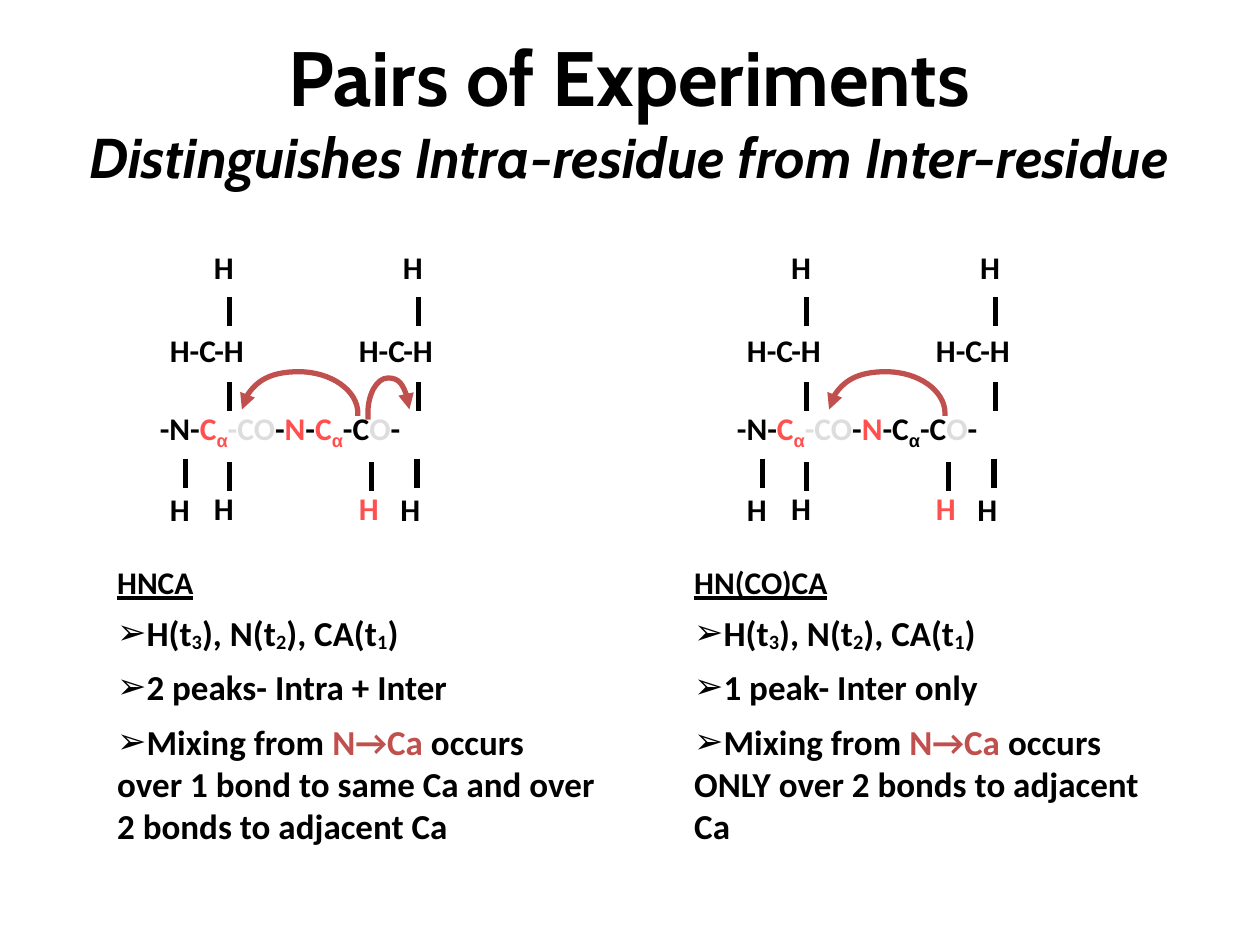
from lxml import etree
from pptx import Presentation
from pptx import util as u
from pptx.dml import color
from pptx.enum import shapes, text
from pptx.oxml import ns

INK, RED, GREY, RUST = "000000", "FF5050", "DDDDDD", "C0504D"


def paint(code):
    return color.RGBColor.from_string(code)


def node(root, tag, **attrs):
    return etree.SubElement(root, ns.qn(tag), attrs)


class Deck:
    face = "Calibri"
    width = u.Pt(3)

    def __init__(self):
        self.file = Presentation()
        self.file.slide_width = u.Inches(10)
        self.file.slide_height = u.Inches(7.5)
        self.slide = self.file.slides.add_slide(self.file.slide_layouts[3])

    def run(self, para, words, size, ink=INK, base=0, face=None):
        run = para.add_run()
        run.text = words
        font = run.font
        font.name = face or self.face
        font.size = u.Pt(size)
        font.bold = True
        font.color.rgb = paint(ink)
        if base:
            font._element.set("baseline", str(base * 1000))
        return font

    def place(self, shape, left, top, wide, high):
        shape.left, shape.top = u.Inches(left), u.Inches(top)
        shape.width, shape.height = u.Inches(wide), u.Inches(high)

    def title(self, head, sub):
        shape = self.slide.shapes.title
        self.place(shape, 0.08, 0.16, 9.83, 1.42)
        frame = shape.text_frame
        frame.auto_size = text.MSO_AUTO_SIZE.NONE
        frame.vertical_anchor = text.MSO_ANCHOR.MIDDLE
        para = frame.paragraphs[0]
        para.alignment = text.PP_ALIGN.CENTER
        self.run(para, head, 44, face="Cabin")
        para.add_line_break()
        self.run(para, sub, 32, face="Cabin").italic = True

    def label(self, left, top, wide, runs):
        box = self.slide.shapes.add_textbox(
            u.Inches(left), u.Inches(top), u.Inches(wide), u.Inches(0.5))
        frame = box.text_frame
        frame.word_wrap = False
        frame.auto_size = text.MSO_AUTO_SIZE.SHAPE_TO_FIT_TEXT
        for words, ink, base in runs:
            face = "Arial" if base else None
            self.run(frame.paragraphs[0], words, 18, ink, base, face)

    def bond(self, left, top):
        line = self.slide.shapes.add_connector(
            shapes.MSO_CONNECTOR.STRAIGHT, u.Inches(left), u.Inches(top),
            u.Inches(left), u.Inches(top + 0.23))
        line.line.color.rgb = paint(INK)
        line.line.width = self.width
        node(line._element.spPr, "a:effectLst")

    def arc(self, start, *curves):
        pen = self.slide.shapes.build_freeform(
            u.Inches(start[0]), u.Inches(start[1]))
        pen.add_line_segments(
            [tuple(map(u.Inches, curve[-1])) for curve in curves],
            close=False)
        shape = pen.convert_to_shape()
        steps = list(shape._element.spPr.iter(ns.qn("a:lnTo")))
        for step, curve in zip(steps, curves):
            bend = etree.Element(ns.qn("a:cubicBezTo"))
            for x, y in curve:
                node(bend, "a:pt", x=str(u.Inches(x) - shape.left),
                     y=str(u.Inches(y) - shape.top))
            step.getparent().replace(step, bend)
        shape.shadow.inherit = False
        shape.fill.background()
        shape.line.color.rgb = paint(RUST)
        shape.line.width = self.width
        node(shape.line._get_or_add_ln(), "a:headEnd", type="triangle")

    def notes(self, slot, left, head, rows):
        shape = self.slide.placeholders[slot]
        self.place(shape, left, 4.42, 4, 2.43)
        frame = shape.text_frame
        frame.word_wrap = True
        frame.auto_size = text.MSO_AUTO_SIZE.NONE
        frame.vertical_anchor = text.MSO_ANCHOR.TOP
        for spot, row in enumerate([[(head, INK, 0)]] + rows):
            para = frame.add_paragraph() if spot else frame.paragraphs[0]
            para.space_before = u.Pt(0)
            para.space_after = u.Pt(7 if spot else 6)
            props = para._p.get_or_add_pPr()
            props.set("marL", "0")
            props.set("indent", "0")
            if spot:
                node(props, "a:buFont", typeface="Arial")
                node(props, "a:buChar", char="➢")
            else:
                node(props, "a:buNone")
            for words, ink, base in row:
                font = self.run(para, words, 20 if spot else 18, ink, base)
                if not spot:
                    font.underline = True


def panel(deck, slot, left, chain, head, peaks, tail):
    deck.label(left + 0.34, 3.2, 3.22, chain)
    for x in (0.77, 2.27):
        deck.label(left + x, 1.92, 0.44, [("H", INK, 0)])
        deck.label(left + x - 0.35, 2.58, 1.14, [("H-C-H", INK, 0)])
        for top in (2.36, 3.03):
            deck.bond(left + x + 0.22, top)
    for x, top in ((0.64, 3.64), (2.48, 3.64), (0.99, 3.67), (2.12, 3.67)):
        deck.bond(left + x, top)
    for x, top, ink in ((0.42, 3.84, INK), (2.25, 3.84, INK),
                        (0.77, 3.83, INK), (1.92, 3.83, RED)):
        deck.label(left + x, top, 0.44, [("H", ink, 0)])
    times = [("H(t", INK, 0), ("3", INK, -8), ("), N(t", INK, 0),
             ("2", INK, -8), ("), CA(t", INK, 0), ("1", INK, -8),
             (")", INK, 0)]
    mixing = [("Mixing from ", INK, 0), ("N→Ca", RUST, 0), (tail, INK, 0)]
    deck.notes(slot, left, head, [times, [(peaks, INK, 0)], mixing])


def sweep(deck, x):
    deck.arc((x, 3.25),
             ((x + 0.02, 3.08), (x + 0.22, 2.95), (x + 0.45, 2.95)),
             ((x + 0.71, 2.95), (x + 0.92, 3.1), (x + 0.92, 3.28)),
             ((x + 0.92, 3.29), (x + 0.92, 3.29), (x + 0.92, 3.3)))


def main():
    deck = Deck()
    deck.title("Pairs of Experiments",
               "Distinguishes Intra-residue from Inter-residue")
    start = [("-N-", INK, 0), ("C", RED, 0), ("α", RED, -20),
             ("-CO", GREY, 0), ("-", INK, 0), ("N", RED, 0)]
    end = [("-C", INK, 0), ("O", GREY, 0), ("-", INK, 0)]
    both = [("-", INK, 0), ("C", RED, 0), ("α", RED, -20)]
    inter = [("-C", INK, 0), ("α", INK, -20)]
    panel(deck, 1, 0.83, start + both + end, "HNCA",
          "2 peaks- Intra + Inter",
          " occurs over 1 bond to same Ca and over 2 bonds to adjacent Ca")
    panel(deck, 2, 5.41, start + inter + end, "HN(CO)CA",
          "1 peak- Inter only",
          " occurs ONLY over 2 bonds to adjacent Ca")
    deck.arc((3.25, 3.25),
             ((3.24, 3.11), (3.17, 3), (3.08, 3)),
             ((2.99, 3), (2.92, 3.13), (2.92, 3.28)),
             ((2.92, 3.3), (2.92, 3.32), (2.92, 3.33)))
    sweep(deck, 1.92)
    sweep(deck, 6.58)
    deck.file.save("out.pptx")


if __name__ == "__main__":
    main()
